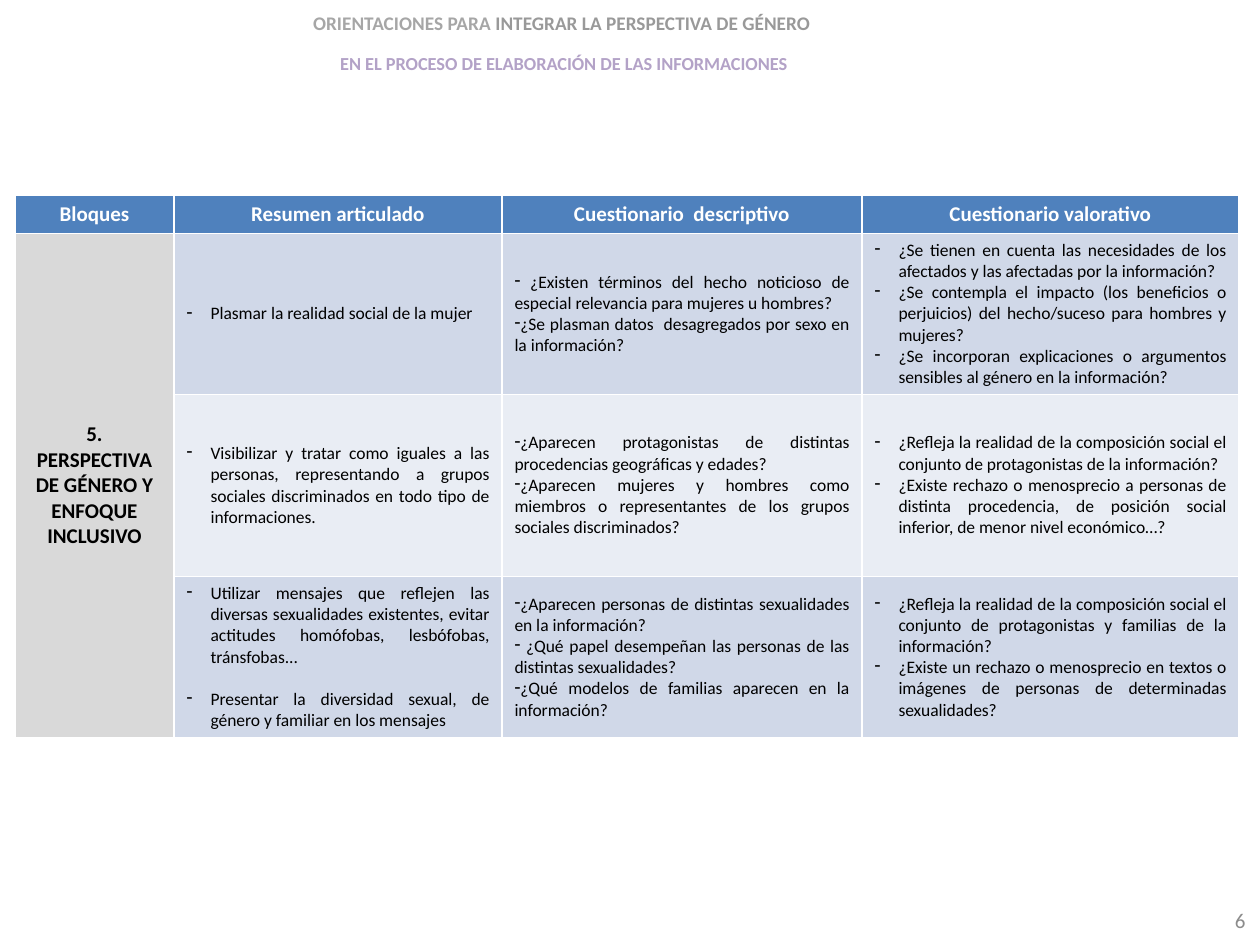
from lxml import etree
from pptx import Presentation
from pptx import util as u
from pptx.dml.color import RGBColor
from pptx.enum import text
from pptx.oxml.ns import qn

PX = 914400 // 126
FONT = "Calibri"
TITLE = [
    [("ORIENTACIONES PARA ", 11, "A6A6A6"),
     ("INTEGRAR LA PERSPECTIVA DE GÉNERO ", 11, "999999")],
    [("EN EL PROCESO DE ELABORACIÓN DE LAS INFORMACIONES", 10.5, "B3A2C7")],
]
HEADERS = ["Bloques", "Resumen articulado", "Cuestionario  descriptivo",
           "Cuestionario valorativo"]
BLOCK = "5. PERSPECTIVA DE GÉNERO Y ENFOQUE INCLUSIVO"
ROWS = [
    (["Plasmar la realidad social de la mujer"],
     [" ¿Existen términos del hecho noticioso de especial relevancia para mujeres u hombres?",
      "¿Se plasman datos  desagregados por sexo en la información?"],
     ["¿Se tienen en cuenta las necesidades de los afectados y las afectadas por la información?",
      "¿Se contempla el impacto (los beneficios o perjuicios) del hecho/suceso para hombres y mujeres?",
      "¿Se incorporan explicaciones o argumentos sensibles al género en la información?"]),
    (["Visibilizar y tratar como iguales a las personas, representando a grupos sociales "
      "discriminados en todo tipo de informaciones."],
     ["¿Aparecen protagonistas de distintas procedencias geográficas y edades?",
      "¿Aparecen mujeres y hombres como miembros o representantes de los grupos sociales discriminados?"],
     ["¿Refleja la realidad de la composición social el conjunto de protagonistas de la información?",
      "¿Existe rechazo o menosprecio a personas de distinta procedencia, de posición social "
      "inferior, de menor nivel económico…?"]),
    (["Utilizar mensajes que reflejen las diversas sexualidades existentes, evitar actitudes "
      "homófobas, lesbófobas, tránsfobas...",
      "Presentar la diversidad sexual, de género y familiar en los mensajes"],
     ["¿Aparecen personas de distintas sexualidades en la información? ",
      " ¿Qué papel desempeñan las personas de las distintas sexualidades?",
      "¿Qué modelos de familias aparecen en la información?"],
     ["¿Refleja la realidad de la composición social el conjunto de protagonistas y familias de la información?",
      "¿Existe un rechazo o menosprecio en textos o imágenes de personas de determinadas sexualidades?"]),
]
COL_WIDTHS = [159, 328, 360, 377]
ROW_HEIGHTS = [38, 159, 182, 159]
BAND_FILLS = ["D0D8E8", "E9EDF4"]
HANGING = [24, 0, 24]
SUMMARY_GAP = 12.2


def px(*values):
    return [v * PX for v in values]


def rgb(color):
    return RGBColor.from_string(color)


def style(r, size, color, bold=False):
    r.font.name, r.font.size, r.font.bold = FONT, u.Pt(size), bold
    r.font.color.rgb = rgb(color)


def add_dash(p, indent):
    pPr = p._p.get_or_add_pPr()
    pPr.set("marL", str(indent * PX))
    pPr.set("indent", str(-indent * PX))
    etree.SubElement(pPr, qn("a:buChar")).set("char", "-")


def fill_cell(cell, lines, fill, size, color, bold, align, indent=None, gap=0):
    """Write the lines into a cell, with dash bullets when an indent is given."""
    cell.fill.solid()
    cell.fill.fore_color.rgb = rgb(fill)
    tf = cell.text_frame
    tf.text = "\n".join(lines)
    for i, p in enumerate(tf.paragraphs):
        p.alignment = align
        if i and gap:
            p.space_before = u.Pt(gap)
        if indent is not None:
            add_dash(p, indent)
        style(p.runs[0], size, color, bold)


def add_title(slide):
    sp = slide.shapes.title
    sp.left, sp.top, sp.width, sp.height = px(134, 5, 860, 76)
    tf = sp.text_frame
    tf.vertical_anchor = text.MSO_ANCHOR.TOP
    tf.auto_size = text.MSO_AUTO_SIZE.NONE
    for i, parts in enumerate(TITLE):
        p = tf.add_paragraph() if i else tf.paragraphs[0]
        p.alignment = text.PP_ALIGN.CENTER
        p.space_after = u.Pt(10)
        for words, size, color in parts:
            r = p.add_run()
            r.text = words
            style(r, size, color, True)


def add_questions(slide):
    frame = slide.shapes.add_table(
        len(ROW_HEIGHTS), len(COL_WIDTHS),
        *px(15, 195, sum(COL_WIDTHS), sum(ROW_HEIGHTS)))
    table = frame.table
    for col, width in zip(table.columns, COL_WIDTHS):
        col.width = width * PX
    for row, height in zip(table.rows, ROW_HEIGHTS):
        row.height = height * PX

    center, justify = text.PP_ALIGN.CENTER, text.PP_ALIGN.JUSTIFY
    for c, header in enumerate(HEADERS):
        fill_cell(table.cell(0, c), [header], "4F81BD", 12, "FFFFFF", True, center)

    block = table.cell(1, 0)
    block.merge(table.cell(len(ROWS), 0))
    fill_cell(block, [BLOCK], "D9D9D9", 12, "000000", True, center)
    block.vertical_anchor = text.MSO_ANCHOR.MIDDLE

    for i, row in enumerate(ROWS):
        for j, lines in enumerate(row):
            cell = table.cell(i + 1, j + 1)
            fill_cell(cell, lines, BAND_FILLS[i % 2], 10, "000000", False, justify,
                      HANGING[j], 0 if j else SUMMARY_GAP)
            cell.vertical_anchor = text.MSO_ANCHOR.MIDDLE


def add_page_number(slide):
    tf = slide.shapes.add_textbox(*px(964, 895, 294, 50)).text_frame
    tf.word_wrap = True
    tf.vertical_anchor = text.MSO_ANCHOR.MIDDLE
    tf.text = "6"
    p = tf.paragraphs[0]
    p.alignment = text.PP_ALIGN.RIGHT
    style(p.runs[0], 12, "8C8C8C")


def main():
    prs = Presentation()
    prs.slide_width, prs.slide_height = px(1260, 945)
    slide = prs.slides.add_slide(prs.slide_layouts[5])
    add_title(slide)
    add_questions(slide)
    add_page_number(slide)
    prs.save("out.pptx")


if __name__ == "__main__":
    main()
